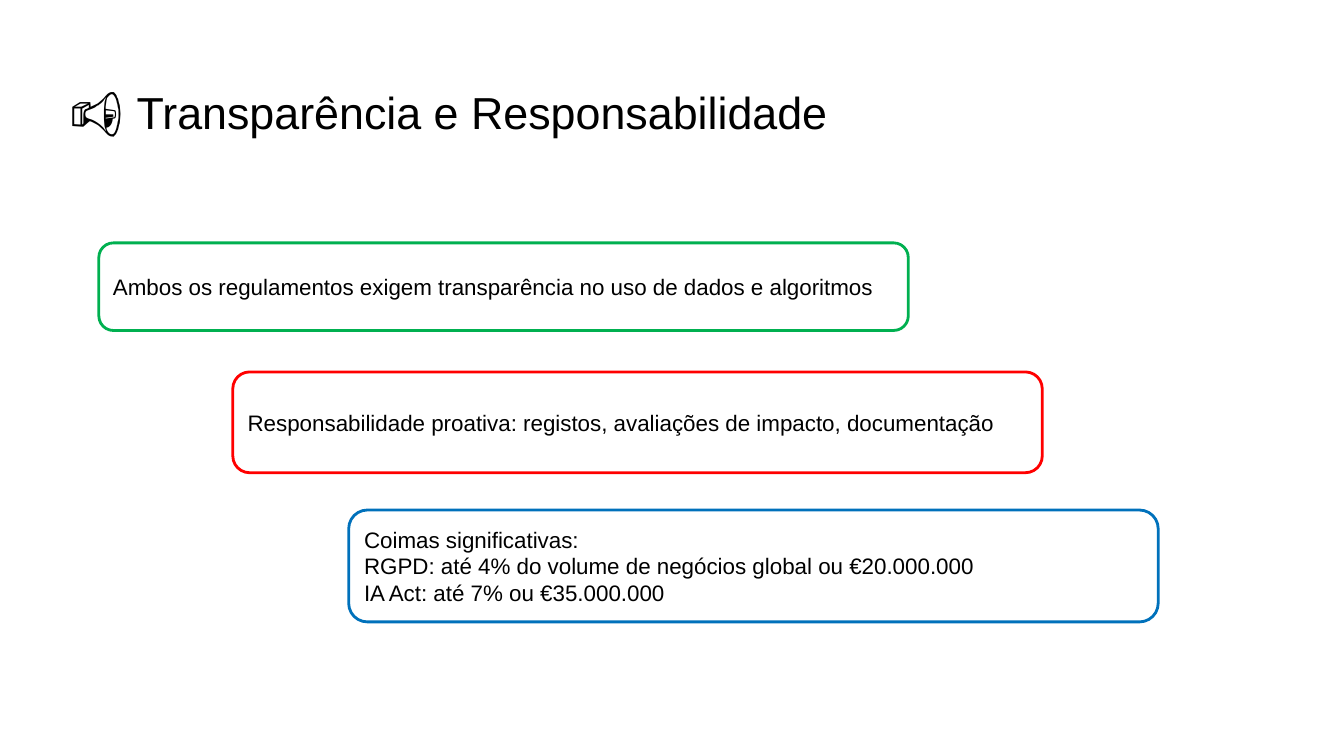
from dataclasses import dataclass

from pptx import Presentation
from pptx.dml.color import RGBColor
from pptx.enum.shapes import MSO_SHAPE
from pptx.enum.text import MSO_ANCHOR, PP_ALIGN
from pptx.slide import Slide
from pptx.text.text import TextFrame, _Paragraph
from pptx.util import Pt


@dataclass(frozen=True)
class Theme:
    font: str = "Arial"
    text: str = "000000"
    paper: str = "FFFFFF"
    green: str = "00B050"
    red: str = "FF0000"
    blue: str = "0071BB"
    icon_size: float = 36
    title_size: float = 32
    body_size: float = 16
    border: float = 2


@dataclass(frozen=True)
class Card:
    left: float
    top: float
    height: float
    color: str
    lines: tuple[str, ...]


THEME = Theme()
CARD_WIDTH = 578.2
CARDS = (
    Card(70.6, 173.5, 62.6, THEME.green,
         ("Ambos os regulamentos exigem transparência no uso de dados e algoritmos",)),
    Card(166.3, 265.7, 72, THEME.red,
         ("Responsabilidade proativa: registos, avaliações de impacto, documentação",)),
    Card(249.1, 364.3, 79.9, THEME.blue,
         ("Coimas significativas:",
          "RGPD: até 4% do volume de negócios global ou €20.000.000",
          "IA Act: até 7% ou €35.000.000")),
)


def add_text(p: _Paragraph, text: str, *, size: float, color: str = THEME.text) -> None:
    r = p.add_run()
    r.text = text
    r.font.name = THEME.font
    r.font.size = Pt(size)
    r.font.color.rgb = RGBColor.from_string(color)


def set_frame(tf: TextFrame) -> None:
    tf.word_wrap = True
    tf.vertical_anchor = MSO_ANCHOR.MIDDLE


def add_title(s: Slide) -> None:
    tf = s.shapes.add_textbox(Pt(43.2), Pt(28.8), Pt(740.2), Pt(104.4)).text_frame
    set_frame(tf)
    p = tf.paragraphs[0]
    p.line_spacing = 0.9
    add_text(p, "📢 ", size=THEME.icon_size)
    add_text(p, "Transparência e Responsabilidade", size=THEME.title_size)


def add_card(s: Slide, card: Card) -> None:
    sp = s.shapes.add_shape(MSO_SHAPE.ROUNDED_RECTANGLE, Pt(card.left), Pt(card.top),
                            Pt(CARD_WIDTH), Pt(card.height))
    sp.shadow.inherit = False
    sp.fill.solid()
    sp.fill.fore_color.rgb = RGBColor.from_string(THEME.paper)
    sp.line.color.rgb = RGBColor.from_string(card.color)
    sp.line.width = Pt(THEME.border)
    tf = sp.text_frame
    set_frame(tf)
    for i, line in enumerate(card.lines):
        p = tf.add_paragraph() if i else tf.paragraphs[0]
        p.alignment = PP_ALIGN.LEFT
        add_text(p, line, size=THEME.body_size)


def main() -> None:
    prs = Presentation()
    prs.slide_width, prs.slide_height = Pt(960), Pt(540)
    s = prs.slides.add_slide(prs.slide_layouts[6])
    add_title(s)
    for card in CARDS:
        add_card(s, card)
    prs.save("out.pptx")


if __name__ == "__main__":
    main()
